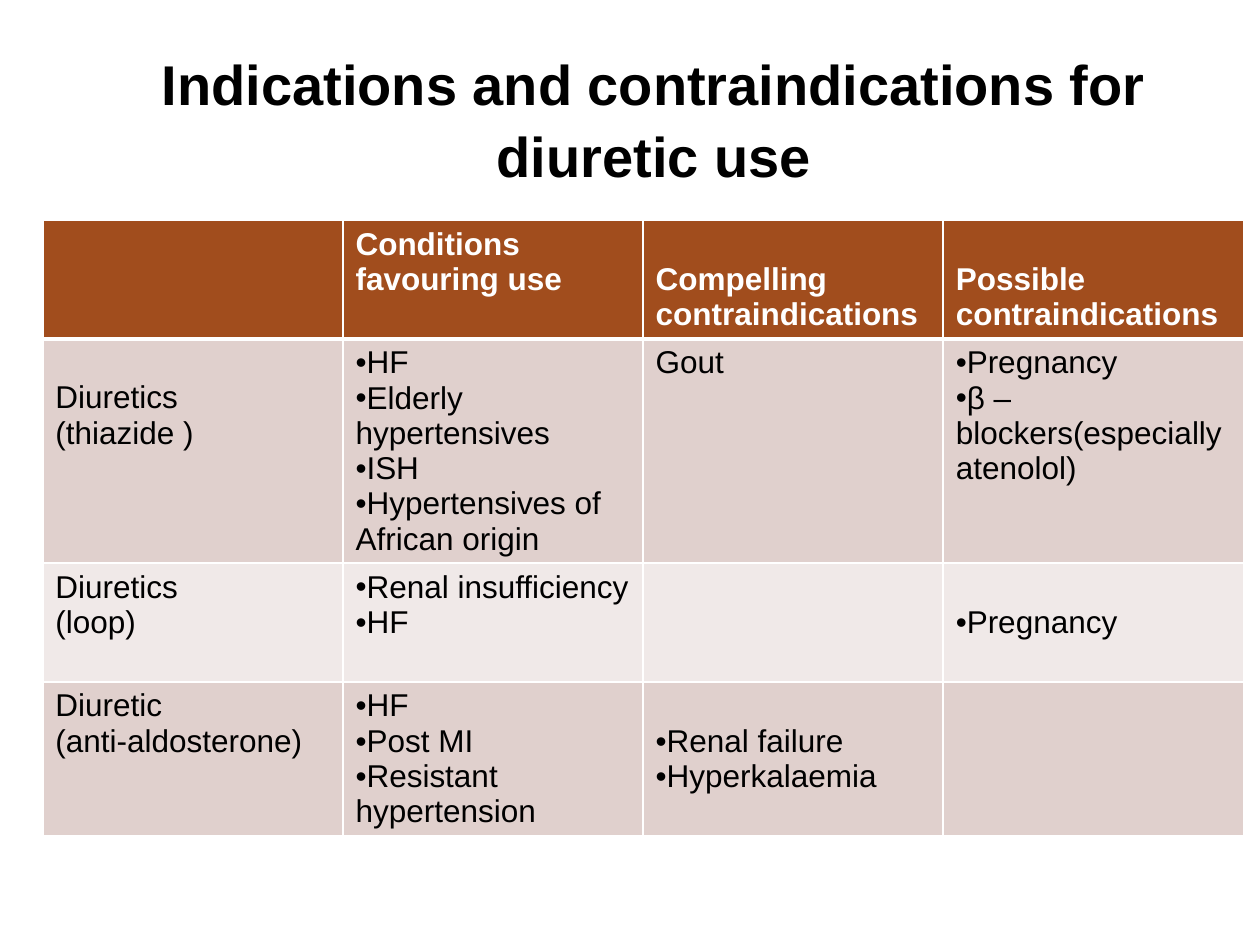
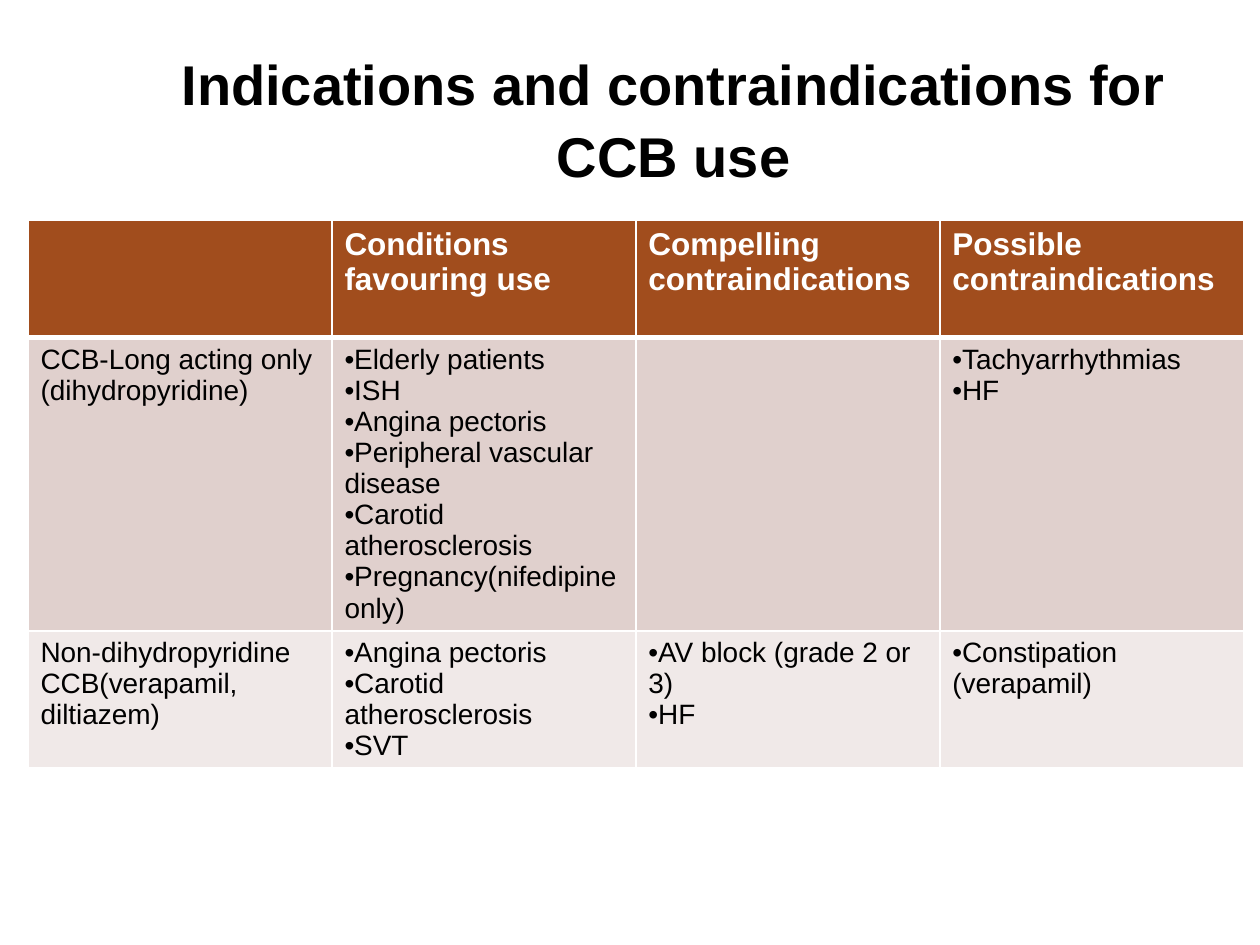
from dataclasses import dataclass

from lxml.etree import SubElement
from pptx import Presentation
from pptx.dml.color import RGBColor
from pptx.enum.text import MSO_ANCHOR, MSO_AUTO_SIZE, PP_ALIGN
from pptx.oxml.ns import qn
from pptx.slide import Slide
from pptx.table import _Cell
from pptx.util import Pt

COLORS = {
    "title": "000000",
    "header": "A14D1D",
    "header_text": "FFFFFF",
    "body_text": "000000",
    "odd_row": "E0D0CD",
    "even_row": "F0E9E8",
    "border": "FFFFFF",
}
FONT = "Arial"
HEADER_SIZE = 18
CELL_MARGIN = 3.6
LOWERED_MARGIN = 23.7
TABLE_TOP = 126
HEADER_HEIGHT = 67


@dataclass(frozen=True)
class Entry:
    """Content of one table cell."""
    lines: tuple[str, ...] = ()
    bulleted: bool = False
    lowered: bool = False


@dataclass(frozen=True)
class DrugPage:
    """A title with its table of indications."""
    title: str
    title_left: float
    title_width: float
    table_left: float
    column_width: float
    body_size: int
    row_heights: tuple[float, ...]
    rows: tuple[tuple[Entry, ...], ...]


def plain(*lines: str, lowered: bool = False) -> Entry:
    """Return an entry without bullets."""
    return Entry(lines, False, lowered)


def bullets(*lines: str, lowered: bool = False) -> Entry:
    """Return a bulleted entry."""
    return Entry(lines, True, lowered)


def header(lowered: bool) -> tuple[Entry, ...]:
    """Return the column headings."""
    return (
        Entry(),
        plain("Conditions favouring use"),
        plain("Compelling contraindications", lowered=lowered),
        plain("Possible contraindications", lowered=lowered),
    )


PAGES = (
    DrugPage(
        "Indications and contraindications for diuretic use",
        37.5, 672.5, 24.5, 171.5, 18, (HEADER_HEIGHT, 128, 68, 87.5),
        (
            header(lowered=True),
            (
                plain("Diuretics", "(thiazide )", lowered=True),
                bullets("HF", "Elderly hypertensives", "ISH", "Hypertensives of African origin"),
                plain("Gout"),
                bullets("Pregnancy", "β –blockers(especially atenolol)"),
            ),
            (
                plain("Diuretics", "(loop)"),
                bullets("Renal insufficiency", "HF"),
                Entry(),
                bullets("Pregnancy", lowered=True),
            ),
            (
                plain("Diuretic", "(anti-aldosterone)"),
                bullets("HF", "Post MI", "Resistant hypertension"),
                bullets("Renal failure", "Hyperkalaemia", lowered=True),
                Entry(),
            ),
        ),
    ),
    DrugPage(
        "Indications and contraindications for CCB use",
        60, 650, 16, 173.7, 16, (HEADER_HEIGHT, 167.5, 78.5),
        (
            header(lowered=False),
            (
                plain("CCB-Long acting only", "(dihydropyridine)"),
                bullets("Elderly patients", "ISH", "Angina pectoris", "Peripheral vascular disease",
                        "Carotid atherosclerosis", "Pregnancy(nifedipine only)"),
                Entry(),
                bullets("Tachyarrhythmias", "HF"),
            ),
            (
                plain("Non-dihydropyridine CCB(verapamil,", "diltiazem)"),
                bullets("Angina pectoris", "Carotid atherosclerosis", "SVT"),
                bullets("AV block (grade 2 or 3)", "HF"),
                bullets("Constipation (verapamil)"),
            ),
        ),
    ),
)


def add_title(page: Slide, content: DrugPage) -> None:
    """Place and format the title placeholder."""
    box = page.shapes.title
    box.left, box.top = Pt(content.title_left), Pt(21.6)
    box.width, box.height = Pt(content.title_width), Pt(90)
    frame = box.text_frame
    frame.text = content.title
    frame.word_wrap = True
    frame.auto_size = MSO_AUTO_SIZE.NONE
    frame.vertical_anchor = MSO_ANCHOR.BOTTOM
    para = frame.paragraphs[0]
    para.alignment = PP_ALIGN.CENTER
    para.line_spacing = 1.07
    font = para.runs[0].font
    font.name, font.size, font.bold = FONT, Pt(32), True
    font.color.rgb = RGBColor.from_string(COLORS["title"])


def add_borders(cell: _Cell, row_index: int) -> None:
    """Draw the cell borders, with a heavier rule below the header."""
    widths = {"lnL": 1, "lnR": 1, "lnT": 3 if row_index == 1 else 1,
              "lnB": 3 if row_index == 0 else 1}
    properties = cell._tc.get_or_add_tcPr()
    for side, width in widths.items():
        line = SubElement(properties, qn(f"a:{side}"), w=str(Pt(width)))
        fill = SubElement(line, qn("a:solidFill"))
        SubElement(fill, qn("a:srgbClr"), val=COLORS["border"])


def fill_cell(cell: _Cell, entry: Entry, row_index: int, body_size: int) -> None:
    """Write and style one table cell."""
    is_header = row_index == 0
    add_borders(cell, row_index)
    fill_name = "header" if is_header else "odd_row" if row_index % 2 else "even_row"
    cell.fill.solid()
    cell.fill.fore_color.rgb = RGBColor.from_string(COLORS[fill_name])
    cell.margin_top = Pt(LOWERED_MARGIN if entry.lowered else CELL_MARGIN)
    cell.margin_bottom = Pt(CELL_MARGIN)
    cell.text_frame.text = "\n".join(entry.lines)
    for para in cell.text_frame.paragraphs:
        if entry.bulleted:
            properties = para._p.get_or_add_pPr()
            properties.set("marL", "0")
            properties.set("indent", "0")
            SubElement(properties, qn("a:buFont"), typeface=FONT)
            SubElement(properties, qn("a:buChar"), char="•")
        for span in para.runs:
            font = span.font
            font.name, font.bold = FONT, is_header
            font.size = Pt(HEADER_SIZE if is_header else body_size)
            font.color.rgb = RGBColor.from_string(COLORS["header_text" if is_header else "body_text"])


def add_drug_table(page: Slide, content: DrugPage) -> None:
    """Add the table of indications and contraindications."""
    column_count = len(content.rows[0])
    table = page.shapes.add_table(
        len(content.rows), column_count, Pt(content.table_left), Pt(TABLE_TOP),
        Pt(content.column_width * column_count), Pt(sum(content.row_heights)),
    ).table
    for column in table.columns:
        column.width = Pt(content.column_width)
    for row_index, entries in enumerate(content.rows):
        table.rows[row_index].height = Pt(content.row_heights[row_index])
        for column_index, entry in enumerate(entries):
            fill_cell(table.cell(row_index, column_index), entry, row_index, content.body_size)


def main() -> None:
    """Build and save the deck."""
    deck = Presentation()
    deck.slide_width, deck.slide_height = Pt(720), Pt(540)
    for content in PAGES:
        page = deck.slides.add_slide(deck.slide_layouts[5])
        add_title(page, content)
        add_drug_table(page, content)
    deck.save("out.pptx")


if __name__ == "__main__":
    main()
